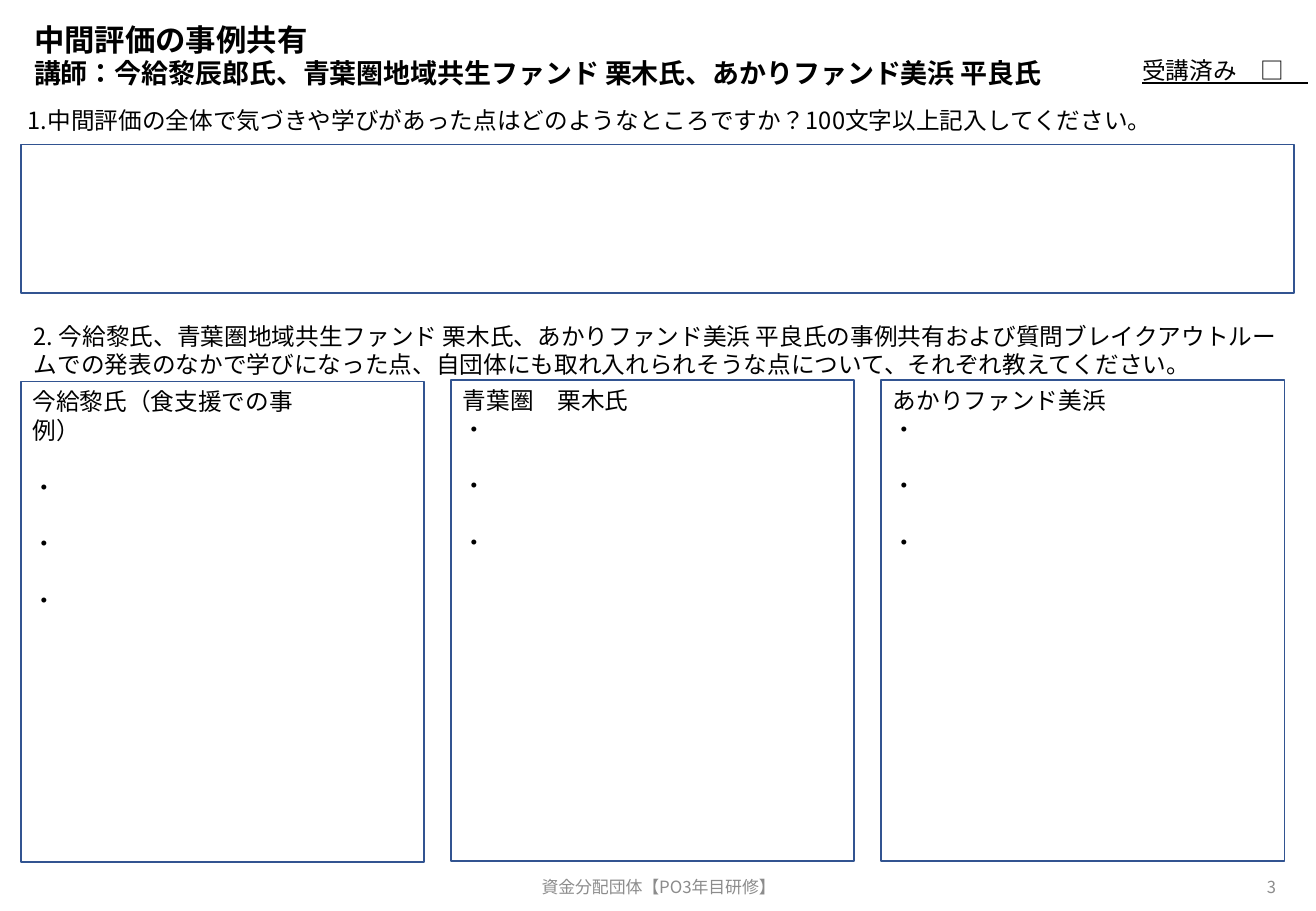
import pptx
import pptx.util
import pptx.dml.color
import pptx.enum.lang
import pptx.enum.shapes
import pptx.enum.text
import pptx.oxml.ns
from lxml import etree

FONT = "Noto Sans CJK JP"
BLACK, GRAY, WHITE, BLUE = "000000", "8C8C8C", "FFFFFF", "325491"
ALIGN = pptx.enum.text.PP_ALIGN
ANCHOR = pptx.enum.text.MSO_ANCHOR


def px(n):
    """One inch is 100 px."""
    return pptx.util.Emu(n * 9144)


def color(code):
    return pptx.dml.color.RGBColor.from_string(code)


def style(para, size, hue=BLACK, align=ALIGN.LEFT, pitch=None):
    font = para.font
    font.size = pptx.util.Pt(size)
    font.color.rgb = color(hue)
    font.name = FONT
    font.language_id = pptx.enum.lang.MSO_LANGUAGE_ID.JAPANESE
    # East Asian letters take their own font entry
    east = etree.SubElement(font._element, pptx.oxml.ns.qn("a:ea"))
    east.set("typeface", FONT)
    para.alignment = align
    para.line_spacing = pptx.util.Pt(pitch or size * 1.2)


def title(slide, box, lines):
    shape = slide.shapes.title
    shape.left, shape.top, shape.width, shape.height = map(px, box)
    frame = shape.text_frame
    frame.auto_size = pptx.enum.text.MSO_AUTO_SIZE.NONE
    frame.vertical_anchor = ANCHOR.MIDDLE
    para = frame.paragraphs[0]
    style(para, 18, pitch=18.5)
    para.font.bold = True
    for i, (text, size) in enumerate(lines):
        if i:
            para.add_line_break()
        run = para.add_run()
        run.text = text
        run.font.size = pptx.util.Pt(size)


def label(slide, box, text, size=14, hue=BLACK, align=ALIGN.LEFT,
          anchor=ANCHOR.TOP):
    frame = slide.shapes.add_textbox(*map(px, box)).text_frame
    frame.word_wrap = True
    frame.vertical_anchor = anchor
    para = frame.paragraphs[0]
    para.text = text
    style(para, size, hue, align)
    return para


def panel(slide, box):
    kind = pptx.enum.shapes.MSO_SHAPE.RECTANGLE
    shape = slide.shapes.add_shape(kind, *map(px, box))
    shape.shadow.inherit = False
    shape.fill.solid()
    shape.fill.fore_color.rgb = color(WHITE)
    shape.line.color.rgb = color(BLUE)
    shape.line.width = pptx.util.Pt(1)
    return shape.text_frame


def card(slide, box, head, gaps, inset):
    """A headed answer box; gaps are blank lines above each bullet."""
    frame = panel(slide, box)
    frame.word_wrap = True
    frame.vertical_anchor = ANCHOR.TOP
    frame.margin_right = px(inset)
    frame.text = "\n".join([head] + ["・"] * len(gaps))
    for para, gap in zip(frame.paragraphs, [0] + gaps):
        style(para, 14)
        para.space_before = pptx.util.Pt(gap * 16.8)


def main():
    deck = pptx.Presentation()
    deck.slide_width, deck.slide_height = px(1083), px(750)
    slide = deck.slides.add_slide(deck.slide_layouts[5])

    # Heading and attendance check
    title(slide, (18, -2, 992, 99), [
        ("中間評価の事例共有", 18),
        ("講師：今給黎辰郎氏、青葉圏地域共生ファンド 栗木氏、"
         "あかりファンド美浜 平良氏", 16)])
    check = label(slide, (930, 41, 201, 34), "受講済み　□　")
    check.font.underline = True

    # Question 1
    label(slide, (13, 82, 1039, 34),
          "1.中間評価の全体で気づきや学びがあった点はどのような"
          "ところですか？100文字以上記入してください。")
    panel(slide, (17, 119, 1048, 122))

    # Question 2
    label(slide, (18, 260, 1048, 57),
          "2. 今給黎氏、青葉圏地域共生ファンド 栗木氏、あかりファンド美浜 "
          "平良氏の事例共有および質問ブレイクアウトルームでの発表のなかで"
          "学びになった点、自団体にも取れ入れられそうな点について、"
          "それぞれ教えてください。")
    cards = [("今給黎氏（食支援での事例）", [1, 1, 1], 95),
             ("青葉圏　栗木氏", [0, 1, 1], 10),
             ("あかりファンド美浜", [0, 1, 1], 10)]
    for i, (head, gaps, inset) in enumerate(cards):
        box = (17 + 354 * i, 314 - min(i, 1), 332, 396)
        card(slide, box, head, gaps, inset)

    # Footer
    label(slide, (359, 710, 366, 40), "資金分配団体【PO3年目研修】", 10, GRAY,
          ALIGN.CENTER, ANCHOR.MIDDLE)
    label(slide, (816, 710, 244, 40), "3", 9.8, GRAY,
          ALIGN.RIGHT, ANCHOR.MIDDLE)

    deck.save("out.pptx")


if __name__ == "__main__":
    main()
